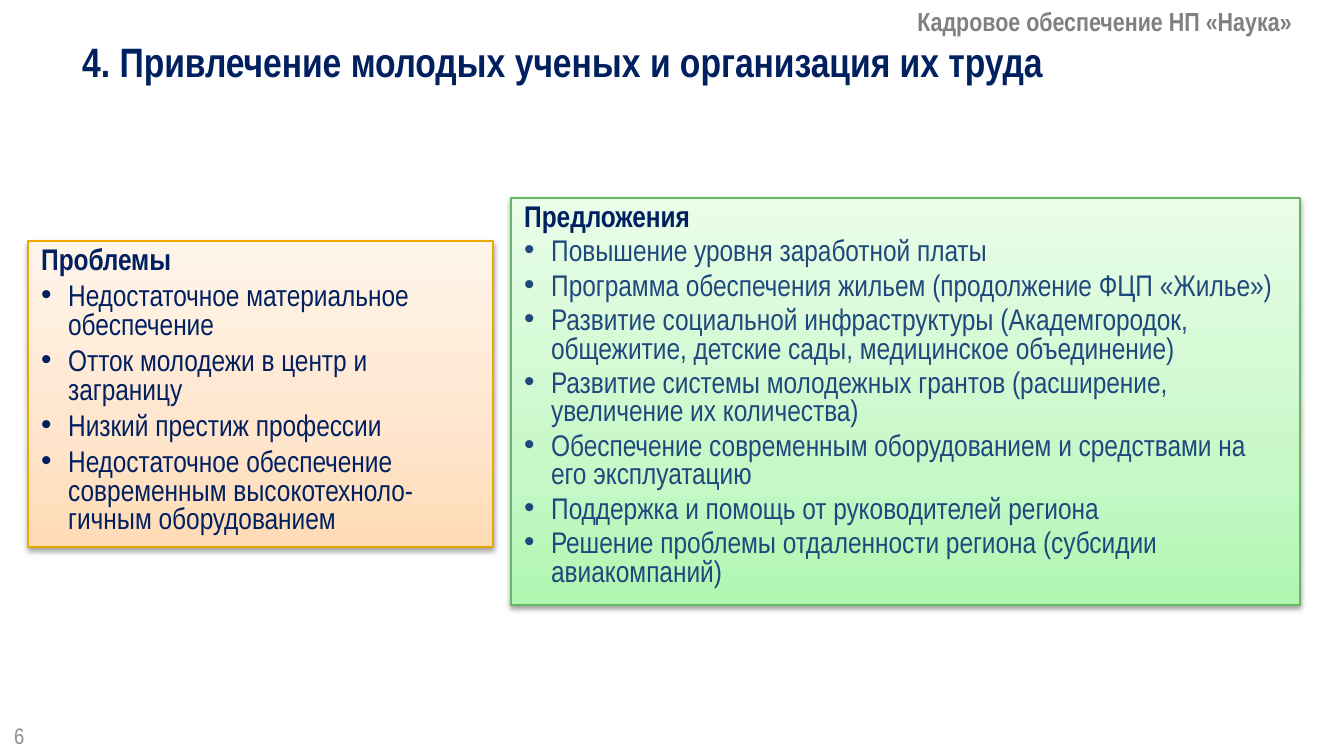
from lxml import etree
from pptx import Presentation
from pptx.dml.color import RGBColor
from pptx.enum.shapes import MSO_SHAPE as Preset
from pptx.enum.text import MSO_ANCHOR as Anchor, MSO_AUTO_SIZE as AutoSize, PP_ALIGN as Align
from pptx.oxml import parse_xml
from pptx.oxml.ns import nsdecls, qn
from pptx.util import Emu, Pt

FONT = "Arial Narrow"
NAVY = "002060"
BLUE = "1F497D"
GRAY = "808080"
PALE_GRAY = "8C8C8C"
INDENT = 27

PROBLEMS = [
    "Недостаточное материальное обеспечение",
    "Отток молодежи в центр и заграницу",
    "Низкий престиж профессии",
    "Недостаточное обеспечение современным высокотехноло-гичным оборудованием",
]
PROPOSALS = [
    "Повышение уровня заработной платы",
    "Программа обеспечения жильем (продолжение ФЦП «Жилье»)",
    "Развитие социальной инфраструктуры (Академгородок, общежитие, детские сады, медицинское объединение)",
    "Развитие системы молодежных грантов (расширение, увеличение их количества)",
    "Обеспечение современным оборудованием и средствами на его эксплуатацию",
    "Поддержка и помощь от руководителей региона",
    "Решение проблемы отдаленности региона (субсидии авиакомпаний)",
]


def px(length):
    """Turn whole pixels into EMU."""
    return Emu(round(length * 914400 / 134.4))


def color(code):
    """Turn a hex string into a colour."""
    return RGBColor.from_string(code)


def add_span(para, text, size, code, bold=False):
    """Add one formatted run to a paragraph."""
    span = para.add_run()
    span.text = text
    font = span.font
    font.name, font.size, font.bold = FONT, Pt(size), bold
    font.color.rgb = color(code)


def add_label(page, place, text, size, code, bold=True, spacing=1.0, after=0, grow=True):
    """Add a one-line text box."""
    box = page.shapes.add_textbox(*map(px, place))
    frame = box.text_frame
    frame.word_wrap = True
    frame.auto_size = AutoSize.SHAPE_TO_FIT_TEXT if grow else AutoSize.NONE
    frame.vertical_anchor = Anchor.TOP if grow else Anchor.MIDDLE
    para = frame.paragraphs[0]
    para.line_spacing, para.space_after = spacing, Pt(after)
    add_span(para, text, size, code, bold)


def add_bullet(para):
    """Give a paragraph a hanging round bullet."""
    props = para._p.get_or_add_pPr()
    props.set("marL", str(px(INDENT)))
    props.set("indent", str(-px(INDENT)))
    etree.SubElement(props, qn("a:buFont")).set("typeface", "Arial")
    etree.SubElement(props, qn("a:buChar")).set("char", "•")


def add_gradient(box, codes):
    """Fill a shape with three colours running upwards."""
    stops = "".join(
        f'<a:gs pos="{share * 1000}"><a:srgbClr val="{code}"/></a:gs>'
        for share, code in zip((0, 35, 100), codes)
    )
    fill = parse_xml(
        f'<a:gradFill {nsdecls("a")} rotWithShape="1"><a:gsLst>{stops}</a:gsLst>'
        '<a:lin ang="16200000" scaled="1"/></a:gradFill>'
    )
    box._element.spPr.find(qn("a:prstGeom")).addnext(fill)


def add_shadow(box):
    """Give a shape a soft shadow falling downwards."""
    box.shadow.inherit = False
    effects = box._element.spPr.find(qn("a:effectLst"))
    effects.append(parse_xml(
        f'<a:outerShdw {nsdecls("a")} blurRad="{Pt(3.1)}" dist="{Pt(1.6)}" dir="5400000" rotWithShape="0">'
        '<a:srgbClr val="000000"><a:alpha val="38000"/></a:srgbClr></a:outerShdw>'
    ))


def add_panel(page, place, heading, items, fills, edge, code, after):
    """Add a shaded panel with a heading and bulleted items."""
    box = page.shapes.add_shape(Preset.RECTANGLE, *map(px, place))
    add_gradient(box, fills)
    box.line.color.rgb = color(edge)
    box.line.width = Pt(0.75)
    add_shadow(box)
    frame = box.text_frame
    frame.word_wrap = True
    frame.vertical_anchor = Anchor.TOP
    for index, text in enumerate([heading, *items]):
        para = frame.add_paragraph() if index else frame.paragraphs[0]
        if index:
            add_bullet(para)
        para.alignment = Align.LEFT
        para.line_spacing, para.space_after = 0.8, Pt(after)
        add_span(para, text, 16, code if index else NAVY, bold=index == 0)


def main():
    """Build the slide and save it."""
    deck = Presentation()
    deck.slide_width, deck.slide_height = px(1344), px(756)
    page = deck.slides.add_slide(deck.slide_layouts[6])
    add_label(page, (69, 39, 1253, 54), "4. Привлечение молодых ученых и организация их труда",
              22, NAVY, spacing=0.8, after=6)
    add_label(page, (1, 716, 55, 40), "6", 12, PALE_GRAY, bold=False, grow=False)
    add_panel(page, (28, 241, 465, 306), "Проблемы", PROBLEMS,
              ("FFDBB5", "FFE5CB", "FFF5EB"), "EBA900", NAVY, 4)
    add_panel(page, (511, 198, 789, 407), "Предложения", PROPOSALS,
              ("B0F6B1", "C8F8C8", "E9FDE9"), "67B569", BLUE, 3)
    add_label(page, (904, 4, 431, 40), "Кадровое обеспечение НП «Наука»",
              14, GRAY, spacing=0.85, after=2)
    deck.save("out.pptx")


if __name__ == "__main__":
    main()
